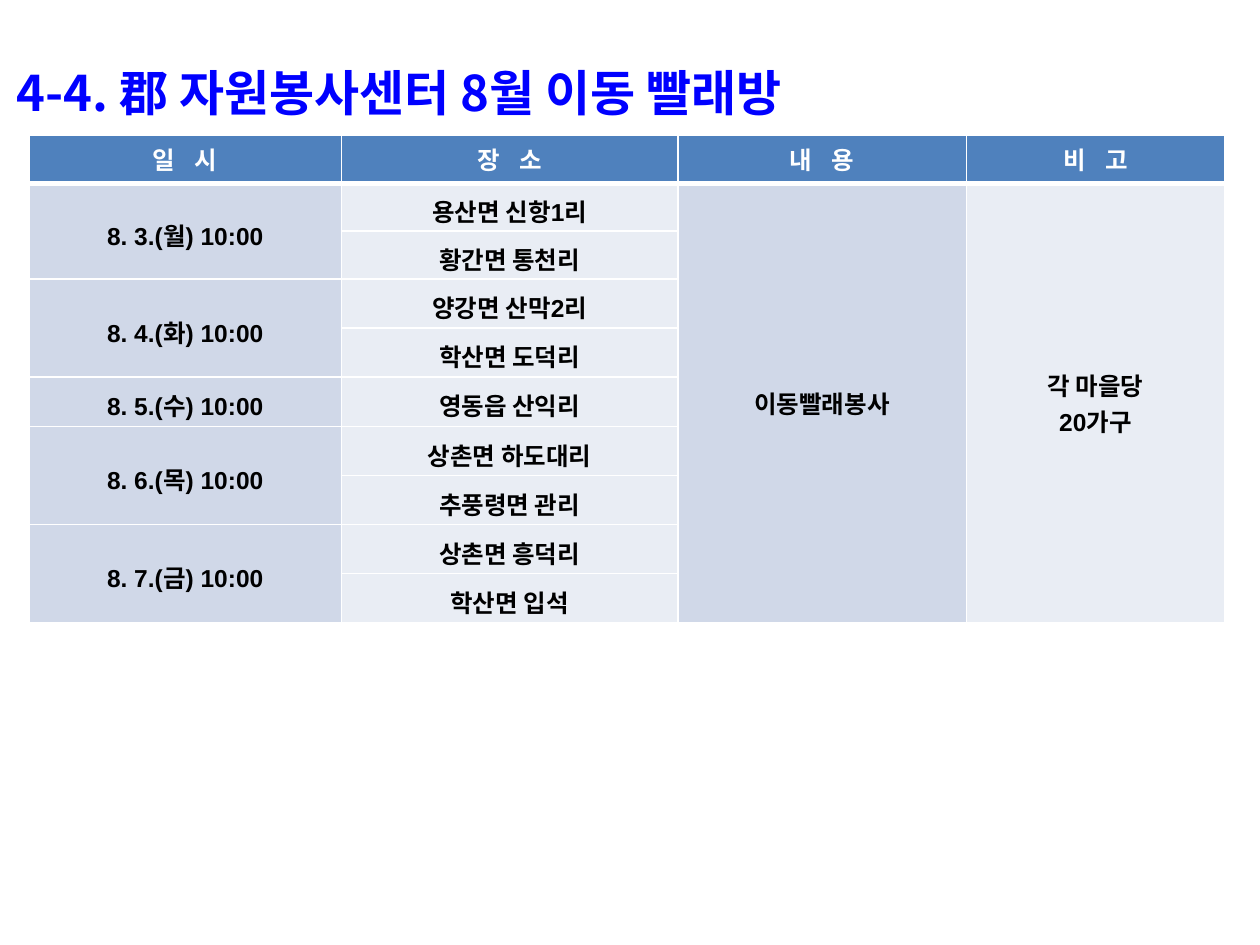
from dataclasses import dataclass

from lxml.etree import SubElement
from pptx import Presentation
from pptx.dml.color import RGBColor
from pptx.enum.text import MSO_ANCHOR, MSO_AUTO_SIZE, PP_ALIGN
from pptx.oxml.ns import qn
from pptx.util import Inches, Pt


@dataclass(frozen=True)
class Theme:
    title_color: str = "0000FF"
    header_fill: str = "4F81BD"
    column_fills: tuple = ("D0D8E8", "E9EDF4")
    white: str = "FFFFFF"
    ink: str = "000000"
    title_size: int = 28
    table_size: int = 14
    latin: str = "Arial"
    korean: str = "Noto Sans CJK KR"


HEADERS = ["일 시", "장 소", "내 용", "비 고"]
SCHEDULE = [
    ("8. 3.(월) 10:00", ["용산면 신항1리", "황간면 통천리"]),
    ("8. 4.(화) 10:00", ["양강면 산막2리", "학산면 도덕리"]),
    ("8. 5.(수) 10:00", ["영동읍 산익리"]),
    ("8. 6.(목) 10:00", ["상촌면 하도대리", "추풍령면 관리"]),
    ("8. 7.(금) 10:00", ["상촌면 흥덕리", "학산면 입석"]),
]
SERVICE = "이동빨래봉사"
REMARK = "각 마을당\n20가구"
COLUMN_WIDTHS = [2.48, 2.67, 2.29, 2.05]
ROW_HEIGHTS = [0.37, 0.38, 0.38] + [0.39] * 7


class SlideBuilder:
    def __init__(self, slide, theme):
        self.slide = slide
        self.theme = theme

    def style_runs(self, paragraph, size, color, latin, spacing=0):
        """Format every run; spacing is the extra gap between letters in points."""
        for run in paragraph.runs:
            run.font.size = Pt(size)
            run.font.bold = True
            run.font.color.rgb = RGBColor.from_string(color)
            run.font.name = latin
            properties = run._r.get_or_add_rPr()
            SubElement(properties, qn("a:ea"), typeface=self.theme.korean)
            if spacing:
                properties.set("spc", str(spacing * 100))

    def title(self, text, left, top, width, height):
        title = self.slide.shapes.title
        title.left, title.top = Inches(left), Inches(top)
        title.width, title.height = Inches(width), Inches(height)
        frame = title.text_frame
        frame.text = text
        frame.word_wrap = True
        frame.auto_size = MSO_AUTO_SIZE.NONE
        frame.vertical_anchor = MSO_ANCHOR.TOP
        heading = frame.paragraphs[0]
        heading.alignment = PP_ALIGN.LEFT
        heading.line_spacing = 1.5
        self.style_runs(heading, self.theme.title_size, self.theme.title_color,
                        self.theme.korean)

    def table(self, left, top, widths, heights):
        frame = self.slide.shapes.add_table(
            len(heights), len(widths), Inches(left), Inches(top),
            Inches(sum(widths)), Inches(sum(heights)))
        table = frame.table
        for column, width in zip(table.columns, widths):
            column.width = Inches(width)
        for row, height in zip(table.rows, heights):
            row.height = Inches(height)
        for r in range(len(heights)):
            for c in range(len(widths)):
                cell = table.cell(r, c)
                self.borders(cell, top=3 if r == 1 else 1, bottom=3 if r == 0 else 1)
                cell.fill.solid()
                fill = self.theme.column_fills[c % 2] if r else self.theme.header_fill
                cell.fill.fore_color.rgb = RGBColor.from_string(fill)
        return table

    def borders(self, cell, top, bottom):
        properties = cell._tc.get_or_add_tcPr()
        for side, width in (("L", 1), ("R", 1), ("T", top), ("B", bottom)):
            line = SubElement(properties, qn(f"a:ln{side}"), w=str(Pt(width)))
            fill = SubElement(line, qn("a:solidFill"))
            SubElement(fill, qn("a:srgbClr"), val=self.theme.white)

    def cell_text(self, cell, text, color, spacing=0, compact=False):
        """Centre text in a cell; compact cells have thin margins and open lines."""
        cell.text_frame.text = text
        cell.vertical_anchor = MSO_ANCHOR.MIDDLE
        if compact:
            cell.margin_left = cell.margin_right = Inches(0.07)
            cell.margin_top = cell.margin_bottom = Inches(0.02)
        for paragraph in cell.text_frame.paragraphs:
            paragraph.alignment = PP_ALIGN.CENTER
            if compact:
                paragraph.line_spacing = 1.2
            self.style_runs(paragraph, self.theme.table_size, color,
                            self.theme.latin, spacing)


def main():
    presentation = Presentation()
    presentation.slide_width, presentation.slide_height = Inches(10), Inches(7.5)
    theme = Theme()
    builder = SlideBuilder(
        presentation.slides.add_slide(presentation.slide_layouts[5]), theme)
    builder.title("4-4. 郡 자원봉사센터 8월 이동 빨래방", 0.03, 0.21, 10, 0.85)

    table = builder.table(0.23, 1.07, COLUMN_WIDTHS, ROW_HEIGHTS)
    for column, header in enumerate(HEADERS):
        builder.cell_text(table.cell(0, column), header, theme.white, spacing=4)

    row = 1
    for time, villages in SCHEDULE:
        time_cell = table.cell(row, 0)
        if len(villages) > 1:
            time_cell.merge(table.cell(row + len(villages) - 1, 0))
        builder.cell_text(time_cell, time, theme.ink, compact=True)
        for village in villages:
            builder.cell_text(table.cell(row, 1), village, theme.ink, compact=True)
            row += 1

    for column, text in ((2, SERVICE), (3, REMARK)):
        table.cell(1, column).merge(table.cell(row - 1, column))
        builder.cell_text(table.cell(1, column), text, theme.ink)

    presentation.save("out.pptx")


if __name__ == "__main__":
    main()
